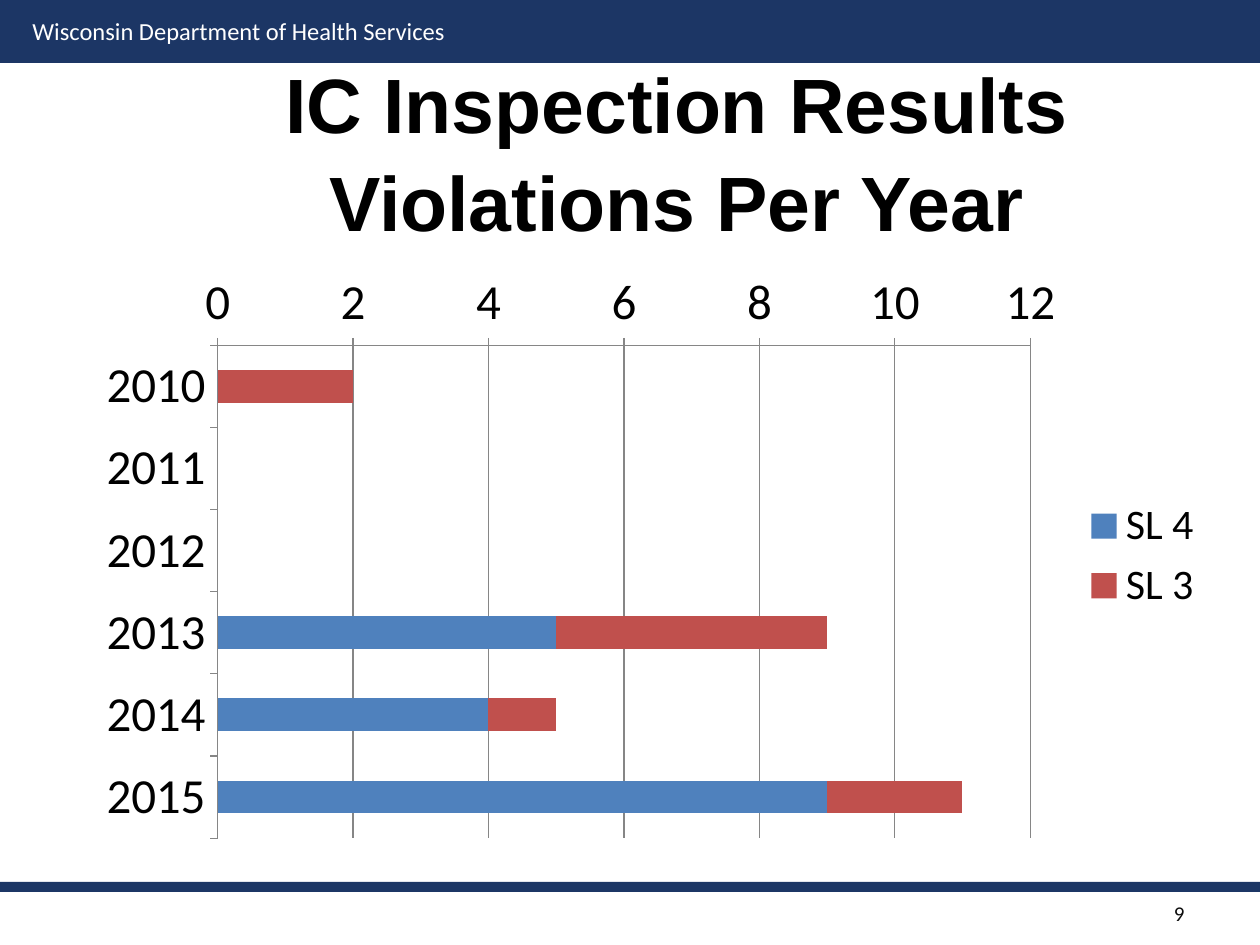
from dataclasses import dataclass
from pptx import Presentation
from pptx.chart.data import CategoryChartData
from pptx.dml.color import RGBColor
from pptx.enum.chart import XL_CHART_TYPE, XL_LEGEND_POSITION, XL_TICK_MARK
from pptx.enum.shapes import MSO_SHAPE
from pptx.enum.text import MSO_ANCHOR, PP_ALIGN
from pptx.util import Emu, Pt


@dataclass(frozen=True)
class Theme:
    """Colours, fonts and type sizes of the slide."""
    navy: str = "1C3665"
    white: str = "FFFFFF"
    black: str = "000000"
    ink: str = "0D0D0D"
    grey: str = "868686"
    bars: tuple = ("4F81BD", "C0504D")
    head: str = "Arial"
    body: str = "Calibri"
    title: int = 44
    axis: int = 28
    legend: int = 24
    brand: int = 14
    page: int = 12


THEME = Theme()
YEARS = ("2010", "2011", "2012", "2013", "2014", "2015")
LEVELS = {
    "SL 4": (0, None, None, 5, 4, 9),
    "SL 3": (2, None, None, 4, 1, 2),
}


def px(count):
    """Turn pixels into EMU."""
    return Emu(round(count * 914400 / 126))


def place(box):
    """Turn a pixel box into EMU lengths."""
    return [px(side) for side in box]


def style(font, size, color, face=THEME.body, bold=False):
    """Set the look of a font."""
    font.size, font.name, font.bold = Pt(size), face, bold
    font.color.rgb = RGBColor.from_string(color)


def add_band(slide, box):
    """Draw a plain navy band."""
    band = slide.shapes.add_shape(MSO_SHAPE.RECTANGLE, *place(box))
    band.shadow.inherit = False
    band.fill.solid()
    band.fill.fore_color.rgb = RGBColor.from_string(THEME.navy)
    band.line.fill.background()


def add_label(slide, box, text, size, color, align, anchor):
    """Write one line of text in a box."""
    frame = slide.shapes.add_textbox(*place(box)).text_frame
    frame.word_wrap, frame.vertical_anchor = True, anchor
    frame.text = text
    line = frame.paragraphs[0]
    line.alignment = align
    style(line.runs[0].font, size, color)


def add_header(slide, box):
    """Draw the top band with the department name."""
    left, top, width, height = box
    add_band(slide, box)
    add_label(slide, (left + 20, top + 10, 442, height - 10),
              "Wisconsin Department of Health Services", THEME.brand,
              THEME.white, PP_ALIGN.LEFT, MSO_ANCHOR.TOP)


def add_footer(slide, box):
    """Draw the bottom rule and the page number."""
    left, top, width, height = box
    add_band(slide, (left, top, width, 10))
    add_label(slide, (left + width - 136, top + 10, 73, 43), "9", THEME.page,
              THEME.ink, PP_ALIGN.RIGHT, MSO_ANCHOR.MIDDLE)


def add_title(slide, box):
    """Place and format the title."""
    title = slide.shapes.title
    title.left, title.top, title.width, title.height = place(box)
    frame = title.text_frame
    frame.text = "IC Inspection Results\vViolations Per Year"
    frame.word_wrap, frame.vertical_anchor = True, MSO_ANCHOR.MIDDLE
    line = frame.paragraphs[0]
    line.alignment, line.line_spacing = PP_ALIGN.CENTER, 1.06
    for run in line.runs:
        style(run.font, THEME.title, THEME.black, THEME.head, True)


def format_axis(axis, grid):
    """Set ticks, lines and labels of an axis."""
    axis.major_tick_mark = XL_TICK_MARK.OUTSIDE
    axis.minor_tick_mark = XL_TICK_MARK.NONE
    axis.has_major_gridlines = grid
    style(axis.tick_labels.font, THEME.axis, THEME.black)
    lines = [axis.format.line]
    if grid:
        lines.append(axis.major_gridlines.format.line)
    for line in lines:
        line.color.rgb = RGBColor.from_string(THEME.grey)
        line.width = Pt(0.75)


def add_bars(slide, box):
    """Draw the stacked bars of violations per year."""
    data = CategoryChartData()
    data.categories = YEARS
    for name, counts in LEVELS.items():
        data.add_series(name, counts)
    chart = slide.shapes.add_chart(
        XL_CHART_TYPE.BAR_STACKED, *place(box), data).chart
    chart.has_title = False
    style(chart.font, 10, THEME.black)
    plot = chart.plots[0]
    plot.gap_width, plot.overlap = 150, 100
    plot.vary_by_categories = False
    for series, color in zip(plot.series, THEME.bars):
        series.format.fill.solid()
        series.format.fill.fore_color.rgb = RGBColor.from_string(color)
    format_axis(chart.category_axis, False)
    format_axis(chart.value_axis, True)
    chart.category_axis.reverse_order = True
    scale = chart.value_axis
    scale.minimum_scale, scale.maximum_scale, scale.major_unit = 0, 12, 2
    chart.has_legend = True
    chart.legend.position = XL_LEGEND_POSITION.RIGHT
    chart.legend.include_in_layout = False
    style(chart.legend.font, THEME.legend, THEME.black)


def main():
    """Build and save the slide."""
    deck = Presentation()
    deck.slide_width, deck.slide_height = px(1260), px(945)
    slide = deck.slides.add_slide(deck.slide_layouts.get_by_name("Title Only"))
    add_footer(slide, (0, 882, 1260, 63))
    add_header(slide, (0, 0, 1260, 63))
    add_title(slide, (157, 78, 1040, 142))
    add_bars(slide, (84, 262, 1134, 588))
    deck.save("out.pptx")


if __name__ == "__main__":
    main()
